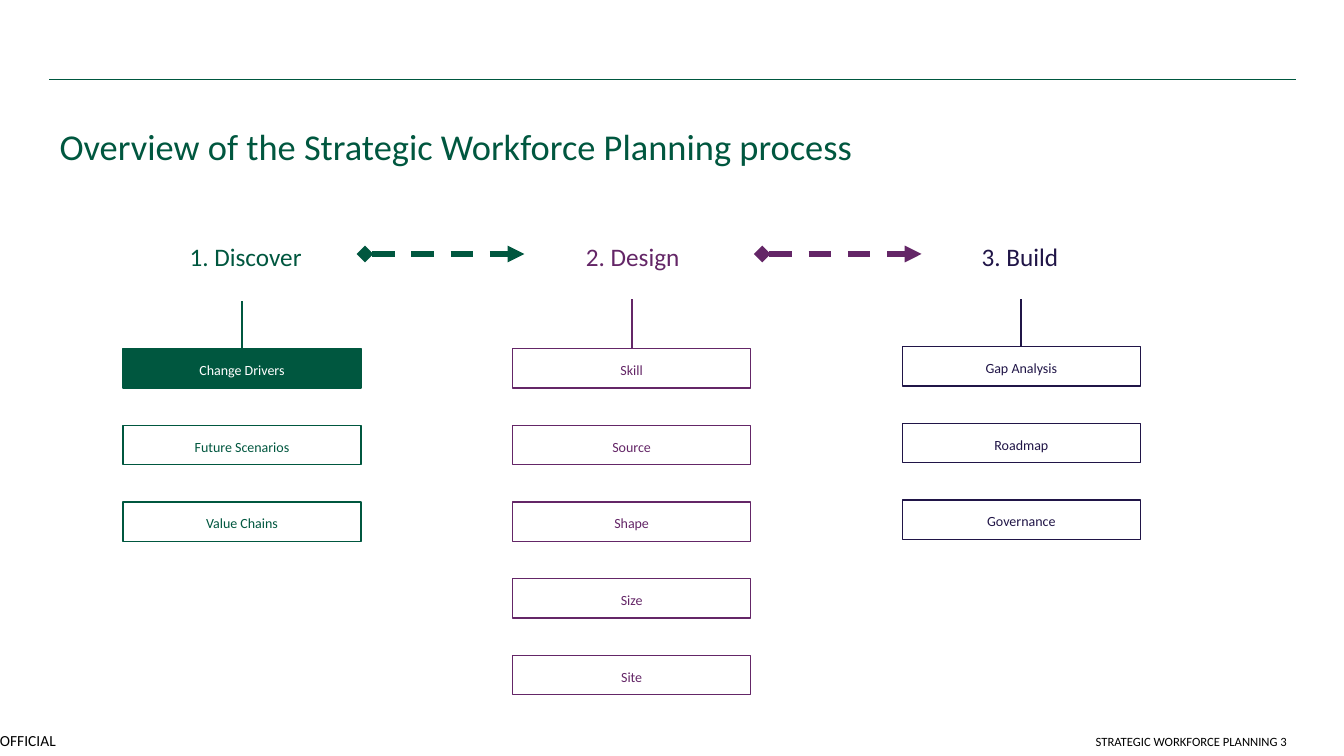
from lxml.etree import SubElement
from pptx import Presentation
from pptx.dml.color import RGBColor
from pptx.enum.dml import MSO_LINE
from pptx.enum.shapes import MSO_CONNECTOR, MSO_SHAPE
from pptx.enum.text import MSO_ANCHOR as ANCHOR, MSO_AUTO_SIZE as AUTO, PP_ALIGN as ALIGN
from pptx.oxml.ns import qn
from pptx.util import Inches, Pt

GREEN = RGBColor(0x00, 0x57, 0x3F)
PURPLE = RGBColor(0x64, 0x26, 0x67)
NAVY = RGBColor(0x20, 0x15, 0x47)
WHITE = RGBColor(0xFF, 0xFF, 0xFF)
BLACK = RGBColor(0x00, 0x00, 0x00)

MARGIN, CONTENT_W = 0.49, 12.36
BOX_LEFT, BOX_W, BOX_H = 1.22, 2.36, 0.39
COL, ROW = 7.73 / 2, 0.76
HEAD_W, HEAD_COL = 3.89, 3.84
ARROW_LEFT, ARROW_W, ARROW_COL, ARROW_Y = 3.62, 1.58, 3.94, 2.52

# heading, colour, steps, top of the stem, top of the first step
STAGES = [
    ("1. Discover", GREEN, ["Change Drivers", "Future Scenarios", "Value Chains"], 2.99, 3.46),
    ("2. Design", PURPLE, ["Skill", "Source", "Shape", "Size", "Site"], 2.97, 3.46),
    ("3. Build", NAVY, ["Gap Analysis", "Roadmap", "Governance"], 2.97, 3.44),
]
CURRENT_STEP = "Change Drivers"


class Deck:
    """Holds the slide and its text style; all lengths are in inches."""

    font = "Calibri"

    def __init__(self, width, height):
        self.prs = Presentation()
        self.prs.slide_width, self.prs.slide_height = Inches(width), Inches(height)
        self.slide = self.prs.slides.add_slide(self.prs.slide_layouts[5])
        self.shapes = self.slide.shapes

    def put_text(self, sp, text, size, color, align=ALIGN.LEFT, anchor=ANCHOR.MIDDLE,
                 spacing=None, after=None, inset=True):
        tf = sp.text_frame
        tf.word_wrap, tf.auto_size, tf.vertical_anchor = True, AUTO.NONE, anchor
        if not inset:
            tf.margin_left = tf.margin_right = tf.margin_top = tf.margin_bottom = 0
        p = tf.paragraphs[0]
        p.alignment, p.line_spacing, p.space_after = align, spacing, after
        r = p.add_run()
        r.text = text
        r.font.name, r.font.size, r.font.color.rgb = self.font, Pt(size), color
        return sp

    def title(self, box, text, size, color):
        sp = self.shapes.title
        sp.left, sp.top, sp.width, sp.height = map(Inches, box)
        return self.put_text(sp, text, size, color, spacing=1.2)

    def text(self, box, text, size, color, **style):
        sp = self.shapes.add_textbox(*map(Inches, box))
        return self.put_text(sp, text, size, color, **style)

    def step(self, box, text, color, filled):
        sp = self.shapes.add_shape(MSO_SHAPE.RECTANGLE, *map(Inches, box))
        sp.shadow.inherit = False
        sp.fill.solid()
        sp.fill.fore_color.rgb = color if filled else WHITE
        sp.line.color.rgb, sp.line.width = color, Pt(1)
        return self.put_text(sp, text, 10, WHITE if filled else color, align=ALIGN.CENTER,
                             spacing=1.2, after=Pt(9), inset=False)

    def line(self, start, end, color, width):
        c = self.shapes.add_connector(MSO_CONNECTOR.STRAIGHT, *map(Inches, (*start, *end)))
        c.line.color.rgb, c.line.width = color, Pt(width)
        SubElement(c._element.spPr, qn("a:effectLst"))
        return c

    def dashed_arrow(self, start, end, color):
        c = self.line(start, end, color, 4)
        c.line.dash_style = MSO_LINE.DASH
        ln = c._element.spPr.find(qn("a:ln"))
        SubElement(ln, qn("a:headEnd"), type="diamond")
        SubElement(ln, qn("a:tailEnd"), type="triangle")

    def stage(self, col, heading, color, steps, stem_top, top):
        """Draws one column: heading, stem and the steps below it."""
        self.text((MARGIN + col * HEAD_COL, 2.06, HEAD_W, 0.91), heading, 18, color,
                  align=ALIGN.CENTER, spacing=1.2)
        left = BOX_LEFT + col * COL
        boxes = [self.step((left, top + row * ROW, BOX_W, BOX_H), name, color,
                           name == CURRENT_STEP)
                 for row, name in enumerate(steps)]
        center = left + BOX_W / 2
        stem = self.line((center, stem_top), (center, top), color, 1.5)
        stem.end_connect(boxes[0], 0)


def main():
    deck = Deck(13.33, 7.5)
    deck.line((MARGIN, 0.79), (MARGIN + CONTENT_W, 0.79), GREEN, 1)
    marking = deck.text((0, 7.19, 0.87, 0.31), "OFFICIAL", 11, BLACK, inset=False)
    marking.text_frame.word_wrap = False
    marking.text_frame.auto_size = AUTO.SHAPE_TO_FIT_TEXT
    deck.title((MARGIN, 0.89, CONTENT_W, 1.02),
               "Overview of the Strategic Workforce Planning process", 26, GREEN)
    for col, stage in enumerate(STAGES):
        deck.stage(col, *stage)
    for gap, color in enumerate((GREEN, PURPLE)):
        x = ARROW_LEFT + gap * ARROW_COL
        deck.dashed_arrow((x, ARROW_Y), (x + ARROW_W, ARROW_Y), color)
    deck.text((6.84, 7.09, 6.02, 0.39), "STRATEGIC WORKFORCE PLANNING 3", 9, BLACK,
              align=ALIGN.RIGHT, anchor=ANCHOR.BOTTOM)
    deck.prs.save("out.pptx")


if __name__ == "__main__":
    main()
